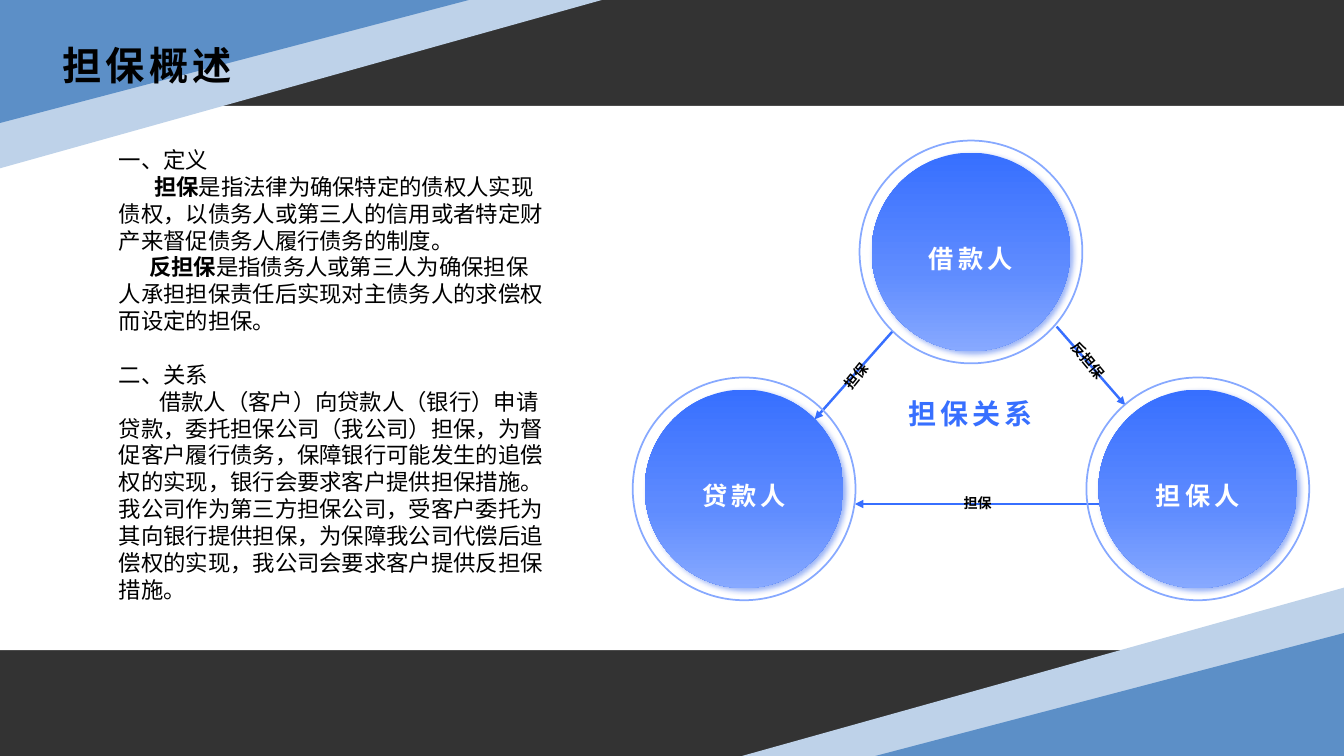
from lxml.etree import SubElement
from pptx import Presentation
from pptx.dml.color import RGBColor
from pptx.enum.shapes import MSO_CONNECTOR, MSO_SHAPE
from pptx.enum.text import MSO_ANCHOR, PP_ALIGN
from pptx.oxml.ns import qn
from pptx.util import Inches, Pt

WIDTH, HEIGHT = 13.33, 7.5
DARK = RGBColor(0x33, 0x33, 0x33)
WHITE = RGBColor(0xFF, 0xFF, 0xFF)
BLACK = RGBColor(0, 0, 0)
PALE_BLUE = RGBColor(0xBE, 0xD2, 0xE9)
STEEL_BLUE = RGBColor(0x5C, 0x8F, 0xC7)
BLUE = RGBColor(0x37, 0x6F, 0xFF)
MID_BLUE = RGBColor(0x5F, 0x8C, 0xFF)
LIGHT_BLUE = RGBColor(0x87, 0xA9, 0xFF)
SHADOW_BLUE = RGBColor(0x00, 0x41, 0xE9)
GRADIENT = [(0, BLUE), (60, MID_BLUE), (100, LIGHT_BLUE)]
BODY_FONT, TITLE_FONT = "Arial", "Noto Sans CJK SC"


def add_node(parent, tag, **attributes):
    values = {key: str(value) for key, value in attributes.items()}
    return SubElement(parent, qn(tag), values)


class SlideBuilder:
    def __init__(self, slide):
        self.slide = slide
        self.shapes = slide.shapes
        background = slide.background.fill
        background.solid()
        background.fore_color.rgb = DARK

    def paint(self, shape, color):
        shape.shadow.inherit = False
        shape.fill.solid()
        shape.fill.fore_color.rgb = color
        shape.line.fill.background()

    def shape(self, kind, left, top, width, height, color):
        shape = self.shapes.add_shape(
            kind, Inches(left), Inches(top), Inches(width), Inches(height))
        self.paint(shape, color)
        return shape

    def polygon(self, points, color):
        corners = [(Inches(x), Inches(y)) for x, y in points]
        outline = self.shapes.build_freeform(*corners[0])
        outline.add_line_segments(corners[1:], close=True)
        self.paint(outline.convert_to_shape(), color)

    def corner(self, flipped):
        """Draw a slanted pair of bands, at top left or turned to bottom right."""
        band = [(0, 1.67), (0, 0.12), (2.91, 0), (5.97, 0)]
        wedge = [(0, 0), (4.65, 0), (0, 1.22)]
        for points, color in ((band, PALE_BLUE), (wedge, STEEL_BLUE)):
            if flipped:
                points = [(WIDTH - x, HEIGHT - y) for x, y in points]
            self.polygon(points, color)

    def arrow(self, start, end):
        arrow = self.shapes.add_connector(
            MSO_CONNECTOR.STRAIGHT, *(Inches(v) for v in (*start, *end)))
        arrow.line.color.rgb = BLUE
        arrow.line.width = Pt(1.75)
        add_node(arrow.line._get_or_add_ln(), "a:tailEnd", type="triangle")
        add_node(arrow._element.spPr, "a:effectLst")

    def party(self, name, center_x, center_y):
        """Draw a shaded disc with a ring around it and a name on it."""
        disc, ring = (
            self.shape(MSO_SHAPE.OVAL, center_x - size / 2, center_y - size / 2,
                       size, size, BLUE) for size in (1.97, 2.21))
        disc.fill.gradient()
        disc.fill.gradient_angle = 270
        properties = disc._element.spPr
        stops = properties.find(qn("a:gradFill")).find(qn("a:gsLst"))
        stops.clear()
        for position, color in GRADIENT:
            stop = add_node(stops, "a:gs", pos=position * 1000)
            add_node(stop, "a:srgbClr", val=color)
        shadow = add_node(properties.find(qn("a:effectLst")), "a:outerShdw",
                          blurRad=Pt(4), dist=Pt(3), dir=45 * 60000,
                          algn="tl", rotWithShape=0)
        shade = add_node(shadow, "a:srgbClr", val=SHADOW_BLUE)
        add_node(shade, "a:alpha", val=40000)
        ring.fill.background()
        ring.line.color.rgb = LIGHT_BLUE
        ring.line.width = Pt(1.25)
        self.heading(name, center_x - 0.855, center_y - 0.22, 1.71, 0.44, 18,
                     WHITE, MSO_ANCHOR.BOTTOM)

    def text_box(self, left, top, width, height, anchor=MSO_ANCHOR.TOP):
        box = self.shapes.add_textbox(
            Inches(left), Inches(top), Inches(width), Inches(height))
        box.text_frame.word_wrap = True
        box.text_frame.vertical_anchor = anchor
        return box

    def style(self, paragraph, size, color, bold=None, font=BODY_FONT, spacing=0):
        paragraph.font.size = Pt(size)
        paragraph.font.color.rgb = color
        paragraph.font.bold = bold
        paragraph.font.name = font
        for run in paragraph.runs:
            properties = run._r.get_or_add_rPr()
            if spacing:
                properties.set("spc", str(spacing * 100))
            add_node(properties, "a:ea", typeface=font)

    def heading(self, text, left, top, width, height, size, color, anchor,
                font=BODY_FONT, align=PP_ALIGN.CENTER, line_spacing=0.9, bottom=0):
        frame = self.text_box(left, top, width, height, anchor).text_frame
        frame.margin_bottom = Inches(bottom)
        frame.text = text
        line = frame.paragraphs[0]
        line.alignment = align
        line.line_spacing = line_spacing
        self.style(line, size, color, True, font, spacing=3)

    def arrow_label(self, text, left, top, width, rotation):
        label = self.text_box(left, top, width, 0.27)
        label.rotation = rotation
        label.text_frame.text = text
        line = label.text_frame.paragraphs[0]
        line.alignment = PP_ALIGN.CENTER
        self.style(line, 10, BLACK, True)

    def body(self, entries, left, top, width, height):
        frame = self.text_box(left, top, width, height).text_frame
        for number, (term, text, indent, gap) in enumerate(entries):
            paragraph = frame.add_paragraph() if number else frame.paragraphs[0]
            if term:
                run = paragraph.add_run()
                run.text = term
                run.font.bold = True
            paragraph.add_run().text = text
            paragraph.space_before = Pt(gap)
            properties = paragraph._p.get_or_add_pPr()
            properties.set("marL", "0")
            properties.set("indent", str(Inches(indent)))
            self.style(paragraph, 16, BLACK)


BODY = [  # bold term, text, first-line indent in inches, gap above in points
    ("", "一、定义", 0, 0),
    ("担保", "是指法律为确保特定的债权人实现债权，以债务人或第三人的信用或者特定财产"
     "来督促债务人履行债务的制度。", 0.35, 0),
    ("反担保", "是指债务人或第三人为确保担保人承担担保责任后实现对主债务人的求偿权"
     "而设定的担保。", 0.3, 0),
    ("", "二、关系", 0, 19.2),
    ("", "借款人（客户）向贷款人（银行）申请贷款，委托担保公司（我公司）担保，"
     "为督促客户履行债务，保障银行可能发生的追偿权的实现，银行会要求客户提供担保措施。"
     "我公司作为第三方担保公司，受客户委托为其向银行提供担保，为保障我公司代偿后"
     "追偿权的实现，我公司会要求客户提供反担保措施。", 0.4, 0),
]
ARROWS = [((8.85, 3.29), (8.08, 4.16)), ((11.14, 5), (8.48, 5)),
          ((10.48, 3.24), (11.16, 4.02))]
PARTIES = [("借款人", 9.63, 2.5), ("贷款人", 7.38, 4.85), ("担保人", 11.88, 4.85)]
ARROW_LABELS = [("反担保", 10.47, 3.44, 0.65, 50), ("担保", 9.25, 4.86, 0.89, 0),
                ("担保", 8.25, 3.6, 0.49, 309)]


def main():
    deck = Presentation()
    deck.slide_width, deck.slide_height = Inches(WIDTH), Inches(HEIGHT)
    builder = SlideBuilder(deck.slides.add_slide(deck.slide_layouts[6]))
    builder.shape(MSO_SHAPE.RECTANGLE, 0, 1.05, WIDTH, 5.4, WHITE)
    for flipped in (False, True):
        builder.corner(flipped)
    for start, end in ARROWS:
        builder.arrow(start, end)
    for party in PARTIES:
        builder.party(*party)
    builder.heading("担保关系", 8.42, 3.82, 2.41, 0.55, 20, BLUE, MSO_ANCHOR.MIDDLE)
    builder.heading("担保概述", 0.52, 0.26, 4.11, 0.68, 28, BLACK, MSO_ANCHOR.MIDDLE,
                    TITLE_FONT, PP_ALIGN.LEFT, 1.2, 0.05)
    for label in ARROW_LABELS:
        builder.arrow_label(*label)
    builder.body(BODY, 1.08, 1.4, 4.44, 4.63)
    deck.save("out.pptx")


if __name__ == "__main__":
    main()
